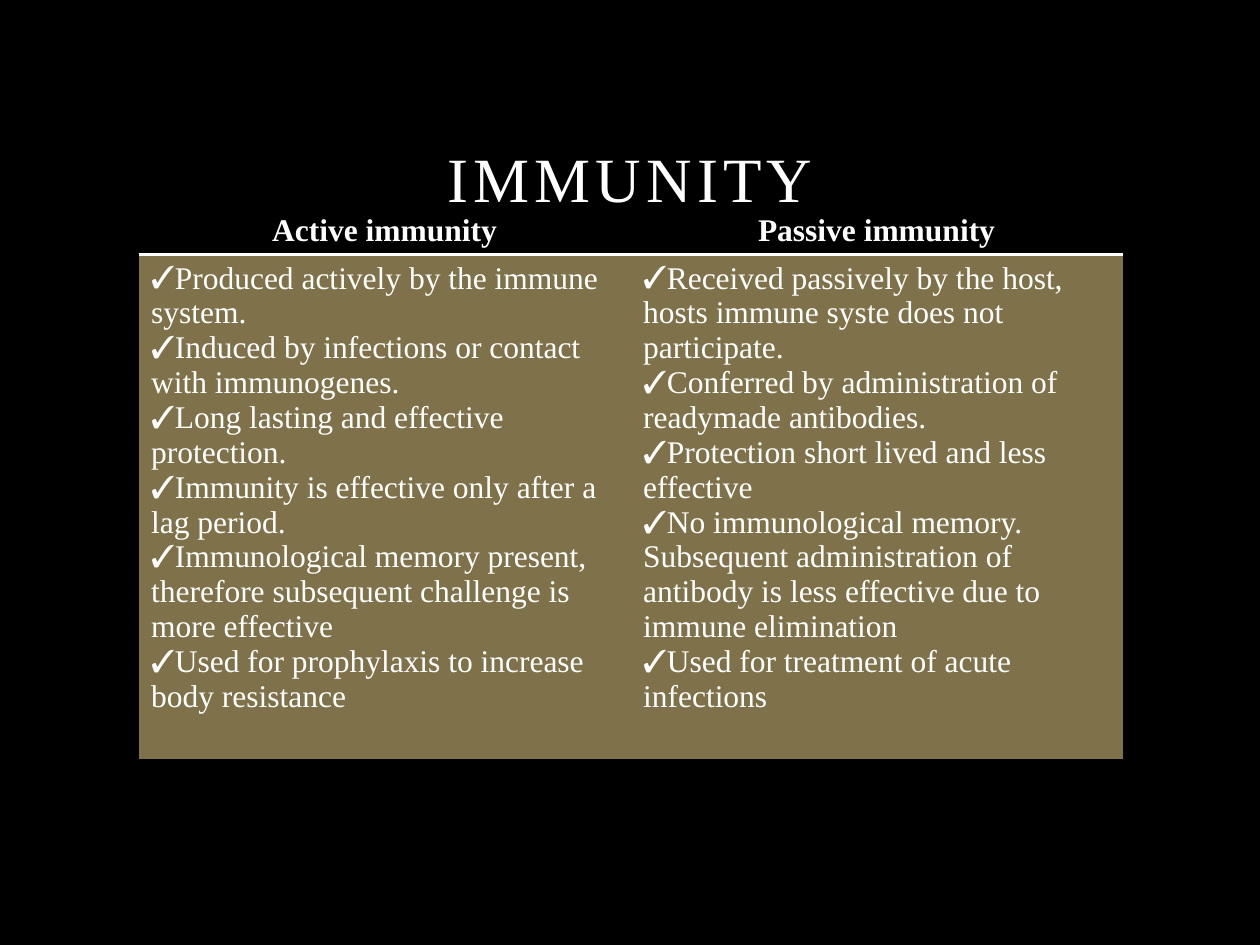
from lxml.etree import SubElement
from pptx import Presentation
from pptx.dml.color import RGBColor
from pptx.enum.text import MSO_ANCHOR, PP_ALIGN
from pptx.oxml.ns import qn
from pptx.util import Inches, Pt

BLACK = RGBColor(0x00, 0x00, 0x00)
WHITE = RGBColor(0xFF, 0xFF, 0xFF)
OLIVE = RGBColor(0x7F, 0x72, 0x4A)
FONT = "Times New Roman"

COLUMNS = {
    "Active immunity": [
        "Produced actively by the immune system.",
        "Induced by infections or contact with immunogenes.",
        "Long lasting and effective protection.",
        "Immunity is effective only after a lag period.",
        "Immunological memory present, therefore subsequent challenge is more effective",
        "Used for prophylaxis to increase body resistance",
    ],
    "Passive immunity": [
        "Received passively by the host, hosts immune syste does not participate.",
        "Conferred by administration of readymade antibodies.",
        "Protection short lived and less effective",
        "No immunological memory. Subsequent administration of antibody is less "
        "effective due to immune elimination",
        "Used for treatment of acute infections",
    ],
}


def write(p, text, size=18, bold=False, align=PP_ALIGN.LEFT, bullet=None, spacing=None):
    """Write one formatted run into a paragraph."""
    p.alignment = align
    if bullet:
        pPr = p._p.get_or_add_pPr()
        pPr.set("marL", "0")
        pPr.set("indent", "0")
        SubElement(pPr, qn("a:buFont")).set("typeface", FONT)
        SubElement(pPr, qn("a:buChar")).set("char", bullet)
    r = p.add_run()
    r.text = text
    r.font.name = FONT
    r.font.size = Pt(size)
    r.font.bold = bold
    r.font.color.rgb = WHITE
    if spacing:
        r._r.get_or_add_rPr().set("spc", str(spacing * 100))


def style_cell(cell, fill, line_sides=()):
    """Fill a cell and draw white lines only on the given sides."""
    tcPr = cell._tc.get_or_add_tcPr()
    for side in "LRTB":
        ln = SubElement(tcPr, qn(f"a:ln{side}"))
        if side in line_sides:
            ln.set("w", str(Pt(2)))
            color = SubElement(SubElement(ln, qn("a:solidFill")), qn("a:srgbClr"))
            color.set("val", str(WHITE))
        else:
            ln.set("w", "0")
            SubElement(ln, qn("a:noFill"))
    cell.fill.solid()
    cell.fill.fore_color.rgb = fill


def add_title(s, text):
    """Add the centred, letter-spaced title."""
    tf = s.shapes.add_textbox(Inches(1.5), Inches(1.01), Inches(7), Inches(0.75)).text_frame
    tf.word_wrap = True
    tf.vertical_anchor = MSO_ANCHOR.BOTTOM
    write(tf.paragraphs[0], text, size=36, align=PP_ALIGN.CENTER, spacing=3)


def add_comparison(s, columns):
    """Add a table with one heading and one checklist per column."""
    heights = Inches(0.37), Inches(3.96)
    table = s.shapes.add_table(2, len(columns), Inches(1.1), Inches(1.64),
                               Inches(7.81), sum(heights)).table
    table.first_row = table.horz_banding = False
    for row, height in zip(table.rows, heights):
        row.height = height
    for i, (heading, points) in enumerate(columns.items()):
        head, body = table.cell(0, i), table.cell(1, i)
        head.margin_bottom = Inches(0.03)
        style_cell(head, BLACK, "B")
        style_cell(body, OLIVE, "T")
        write(head.text_frame.paragraphs[0], heading, bold=True, align=PP_ALIGN.CENTER)
        tf = body.text_frame
        for j, point in enumerate(points):
            p = tf.add_paragraph() if j else tf.paragraphs[0]
            write(p, point, bullet="✓")


def main():
    """Build the slide and save it."""
    prs = Presentation()
    prs.slide_width, prs.slide_height = Inches(10), Inches(7.5)
    s = prs.slides.add_slide(prs.slide_layouts[6])
    s.background.fill.solid()
    s.background.fill.fore_color.rgb = BLACK
    add_title(s, "IMMUNITY")
    add_comparison(s, COLUMNS)
    prs.save("out.pptx")


if __name__ == "__main__":
    main()
